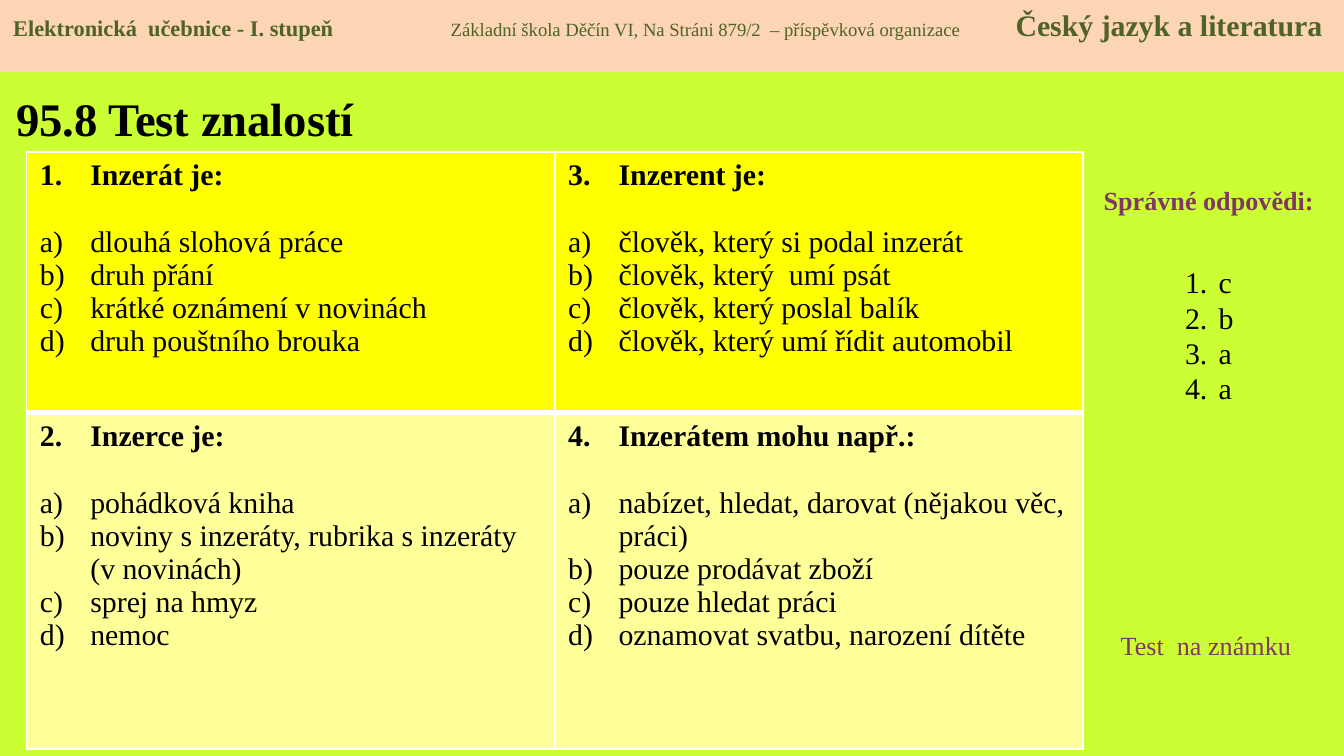
from dataclasses import dataclass

from lxml import etree
from pptx import Presentation
from pptx.dml.color import RGBColor
from pptx.enum.shapes import MSO_SHAPE
from pptx.enum.text import MSO_ANCHOR, PP_ALIGN
from pptx.oxml.ns import qn
from pptx.util import Pt

RECTANGLE = MSO_SHAPE.RECTANGLE
TOP, MIDDLE = MSO_ANCHOR.TOP, MSO_ANCHOR.MIDDLE
LEFT, CENTER = PP_ALIGN.LEFT, PP_ALIGN.CENTER

FONT = "Times New Roman"
BLACK, WHITE, PLUM, OLIVE = "000000", "FFFFFF", "813763", "4F6228"
LIME, PEACH = "CCFF33", "FCD5B5"
ROW_FILLS = ("FFFF00", "FFFF99")
ROW_HEIGHTS = (139.7, 180)
COLUMN_WIDTH = 283
HANGING = 27


@dataclass(frozen=True)
class Question:
    number: int
    prompt: str
    options: tuple[str, ...]


@dataclass(frozen=True)
class Label:
    text: str
    left: float
    top: float
    width: float
    align: PP_ALIGN
    bold: bool


@dataclass(frozen=True)
class HeaderPart:
    text: str
    size: float
    bold: bool


# Rows of the table, from top to bottom
QUESTIONS = (
    (
        Question(1, "Inzerát je:", (
            "dlouhá slohová práce", "druh přání",
            "krátké oznámení v novinách", "druh pouštního brouka")),
        Question(3, "Inzerent je:", (
            "člověk, který si podal inzerát", "člověk, který  umí psát",
            "člověk, který poslal balík", "člověk, který umí řídit automobil")),
    ),
    (
        Question(2, "Inzerce je:", (
            "pohádková kniha", "noviny s inzeráty, rubrika s inzeráty (v novinách)",
            "sprej na hmyz", "nemoc")),
        Question(4, "Inzerátem mohu např.:", (
            "nabízet, hledat, darovat (nějakou věc, práci)", "pouze prodávat zboží",
            "pouze hledat práci", "oznamovat svatbu, narození dítěte")),
    ),
)
ANSWERS = ("c", "b", "a", "a")
LABELS = (
    Label("Správné odpovědi:", 579.6, 95, 136, CENTER, True),
    Label("Test  na známku", 593.3, 333.4, 113, LEFT, False),
)
HEADER_PARTS = (
    HeaderPart("Elektronická  učebnice - I. stupeň", 12, True),
    HeaderPart("Základní škola Děčín VI, Na Stráni 879/2  – příspěvková organizace", 10, False),
    HeaderPart("Český jazyk a literatura", 16, True),
)
HEADER_TABS = (234.4, 537)


def color(value: str) -> RGBColor:
    return RGBColor.from_string(value)


def add_span(para, text: str, size: float, fill: str = BLACK, bold: bool = False) -> None:
    span = para.add_run()
    span.text = text
    for name, value in {"name": FONT, "size": Pt(size), "bold": bold}.items():
        setattr(span.font, name, value)
    span.font.color.rgb = color(fill)


def next_para(frame, is_first: bool):
    return frame.paragraphs[0] if is_first else frame.add_paragraph()


def number_para(para, scheme: str, hanging: float, start: int = 1) -> None:
    """Give the paragraph a hanging automatic number."""
    properties = para._p.get_or_add_pPr()
    properties.set("marL", str(Pt(hanging)))
    properties.set("indent", str(-Pt(hanging)))
    bullet = etree.SubElement(properties, qn("a:buAutoNum"), type=scheme)
    if start > 1:
        bullet.set("startAt", str(start))


def add_borders(cell, widths: dict[str, float]) -> None:
    properties = cell._tc.get_or_add_tcPr()
    for side, width in widths.items():
        line = etree.SubElement(properties, qn(f"a:ln{side}"), w=str(Pt(width)))
        fill = etree.SubElement(line, qn("a:solidFill"))
        etree.SubElement(fill, qn("a:srgbClr"), val=WHITE)


def fill_question(cell, question: Question) -> None:
    frame = cell.text_frame
    prompt = frame.paragraphs[0]
    number_para(prompt, "arabicPeriod", HANGING, question.number)
    add_span(prompt, question.prompt, 16, bold=True)
    for index, option in enumerate(question.options):
        para = frame.add_paragraph()
        number_para(para, "alphaLcParenR", HANGING)
        if index == 0:
            para.space_before = Pt(18)
        add_span(para, option, 16)


def add_questions(slide) -> None:
    table = slide.shapes.add_table(
        2, 2, Pt(14.2), Pt(81.5), Pt(2 * COLUMN_WIDTH), Pt(sum(ROW_HEIGHTS))).table
    table.first_row = table.horz_banding = False
    for column in table.columns:
        column.width = Pt(COLUMN_WIDTH)
    for row_index, row in enumerate(QUESTIONS):
        table.rows[row_index].height = Pt(ROW_HEIGHTS[row_index])
        top, bottom = ((1, 3), (3, 1))[row_index]
        for column_index, question in enumerate(row):
            cell = table.cell(row_index, column_index)
            add_borders(cell, {"L": 1, "R": 1, "T": top, "B": bottom})
            cell.fill.solid()
            cell.fill.fore_color.rgb = color(ROW_FILLS[row_index])
            fill_question(cell, question)


def add_box(slide, left: float, top: float, width: float, height: float):
    frame = slide.shapes.add_textbox(Pt(left), Pt(top), Pt(width), Pt(height)).text_frame
    frame.word_wrap = True
    return frame


def add_label(slide, label: Label) -> None:
    para = add_box(slide, label.left, label.top, label.width, 24.5).paragraphs[0]
    para.alignment = label.align
    add_span(para, label.text, 14, PLUM, label.bold)


def add_answers(slide) -> None:
    frame = add_box(slide, 627.8, 138, 50, 83)
    for index, answer in enumerate(ANSWERS):
        para = next_para(frame, index == 0)
        number_para(para, "arabicPeriod", 18)
        para.line_spacing = Pt(19)
        add_span(para, answer, 16)


def add_header(slide) -> None:
    band = slide.shapes.add_shape(RECTANGLE, 0, 0, Pt(720), Pt(38.7))
    band.shadow.inherit = False
    band.fill.solid()
    band.fill.fore_color.rgb = color(PEACH)
    band.line.fill.background()
    band.text_frame.word_wrap = True
    band.text_frame.vertical_anchor = TOP
    para = band.text_frame.paragraphs[0]
    para.alignment = LEFT
    tabs = etree.SubElement(para._p.get_or_add_pPr(), qn("a:tabLst"))
    for position in HEADER_TABS:
        etree.SubElement(tabs, qn("a:tab"), pos=str(Pt(position)), algn="l")
    for index, part in enumerate(HEADER_PARTS):
        text = part.text if index == 0 else "\t" + part.text
        add_span(para, text, part.size, OLIVE, part.bold)


def set_title(slide, text: str) -> None:
    title = slide.shapes.title
    place = {"left": 1.4, "top": 39.6, "width": 229.7, "height": 46.8}
    for name, value in place.items():
        setattr(title, name, Pt(value))
    title.text_frame.vertical_anchor = MIDDLE
    para = title.text_frame.paragraphs[0]
    para.alignment = LEFT
    add_span(para, text, 25, bold=True)


def main() -> None:
    deck = Presentation()
    deck.slide_width, deck.slide_height = Pt(720), Pt(405)
    slide = deck.slides.add_slide(deck.slide_layouts[5])
    slide.background.fill.solid()
    slide.background.fill.fore_color.rgb = color(LIME)
    set_title(slide, "95.8 Test znalostí")
    add_questions(slide)
    for label in LABELS:
        add_label(slide, label)
    add_answers(slide)
    add_header(slide)
    deck.save("out.pptx")


if __name__ == "__main__":
    main()
